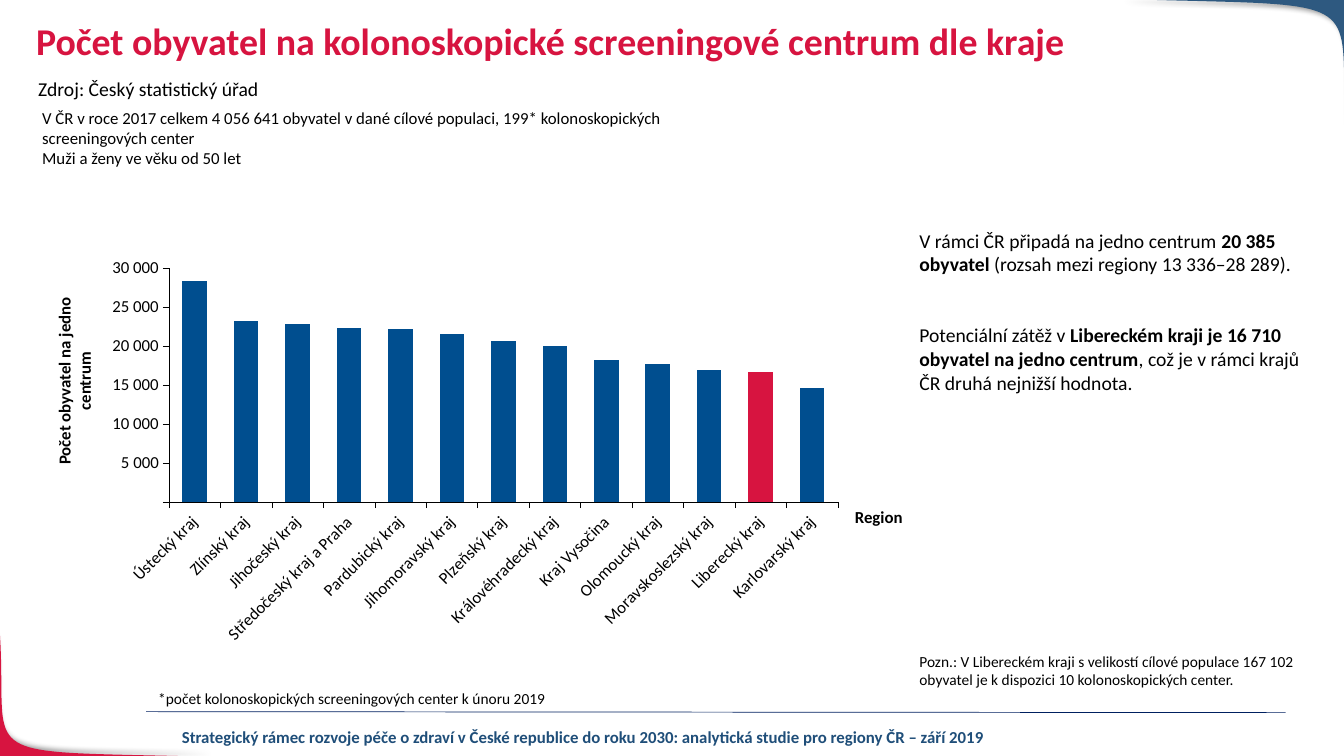
from lxml import etree
from pptx import Presentation
from pptx.chart.data import CategoryChartData
from pptx.dml.color import RGBColor
from pptx.enum.chart import XL_CHART_TYPE, XL_TICK_MARK
from pptx.enum.shapes import MSO_CONNECTOR
from pptx.enum.text import MSO_ANCHOR, PP_ALIGN
from pptx.oxml import parse_xml
from pptx.oxml.ns import nsdecls, qn
from pptx.util import Pt

COLUMNS = XL_CHART_TYPE.COLUMN_CLUSTERED
TICK_OUTSIDE, TICK_NONE = XL_TICK_MARK.OUTSIDE, XL_TICK_MARK.NONE
STRAIGHT = MSO_CONNECTOR.STRAIGHT
TOP = MSO_ANCHOR.TOP
LEFT, CENTER = PP_ALIGN.LEFT, PP_ALIGN.CENTER

EMU_PER_PX = 9144
FONT = "Calibri"
COLORS = {
    "red": "D71440",
    "corner_blue": "2E5980",
    "bar_blue": "004E8F",
    "rule": "002060",
    "footer": "1F4E79",
    "black": "000000",
}
POPULATION_PER_CENTRE = {
    "Ústecký kraj": 28300,
    "Zlínský kraj": 23200,
    "Jihočeský kraj": 22800,
    "Středočeský kraj a Praha": 22300,
    "Pardubický kraj": 22200,
    "Jihomoravský kraj": 21500,
    "Plzeňský kraj": 20600,
    "Královéhradecký kraj": 20000,
    "Kraj Vysočina": 18200,
    "Olomoucký kraj": 17700,
    "Moravskoslezský kraj": 16900,
    "Liberecký kraj": 16700,
    "Karlovarský kraj": 14600,
}
HIGHLIGHTED_REGION = "Liberecký kraj"
PLOT_AREA = {"x": 0.107, "y": 0.109, "w": 0.862, "h": 0.516}


def px(length):
    """Turn px into EMU."""
    return round(length * EMU_PER_PX)


def color(name):
    """Look up a named colour."""
    return RGBColor.from_string(COLORS[name])


def style_font(font, size, bold=False, color_name="black"):
    """Set the typeface, size, weight and colour of a font."""
    font.name = FONT
    font.size = Pt(size)
    font.bold = bold
    font.color.rgb = color(color_name)


def add_text(slide, box, paragraphs, size, bold=False, color_name="black",
             align=LEFT, rotation=0, wrap=True, gap=0, line_spacing=None):
    """Add a text box; each paragraph is a list of (text, bold) runs or one string."""
    shape = slide.shapes.add_textbox(*map(px, box))
    shape.rotation = rotation
    frame = shape.text_frame
    frame.word_wrap = wrap
    frame.vertical_anchor = TOP
    for index, content in enumerate(paragraphs):
        paragraph = frame.add_paragraph() if index else frame.paragraphs[0]
        paragraph.alignment = align
        paragraph.line_spacing = line_spacing
        if index:
            paragraph.space_before = Pt(gap)
        runs = [(content, bold)] if isinstance(content, str) else content
        for text, run_bold in runs:
            run = paragraph.add_run()
            run.text = text
            style_font(run.font, size, run_bold, color_name)


def curve_points(start, first_control, second_control, end, steps=40):
    """Sample a cubic curve, returning points in EMU."""
    points = []
    for step in range(steps + 1):
        t = step / steps
        weights = ((1 - t) ** 3, 3 * t * (1 - t) ** 2, 3 * t ** 2 * (1 - t), t ** 3)
        controls = (start, first_control, second_control, end)
        points.append(tuple(
            px(sum(weight * point[axis] for weight, point in zip(weights, controls)))
            for axis in (0, 1)))
    return points


def add_corner(slide, curve, corner, color_name, shadow_degrees):
    """Add a curved corner with a soft shadow."""
    points = curve_points(*curve) + [tuple(map(px, corner))]
    builder = slide.shapes.build_freeform(*points[0], scale=1.0)
    builder.add_line_segments(points[1:], close=True)
    shape = builder.convert_to_shape()
    shape.fill.solid()
    shape.fill.fore_color.rgb = color(color_name)
    shape.line.fill.background()
    shape.shadow.inherit = False
    effects = shape._element.spPr.find(qn("a:effectLst"))
    effects.append(parse_xml(
        f'<a:outerShdw {nsdecls("a")} blurRad="{Pt(4)}" dist="{Pt(3)}" '
        f'dir="{shadow_degrees * 60000}" algn="tl" rotWithShape="0">'
        f'<a:srgbClr val="{COLORS["black"]}"><a:alpha val="40000"/></a:srgbClr>'
        '</a:outerShdw>'))


def add_rule(slide, start, end):
    """Add the thin line above the footer."""
    rule = slide.shapes.add_connector(STRAIGHT, *map(px, start + end))
    rule.line.color.rgb = color("rule")
    rule.line.width = Pt(0.5)
    etree.SubElement(rule._element.spPr, qn("a:effectLst"))


def style_axis(axis):
    """Give an axis its line, ticks and label font."""
    axis.has_major_gridlines = False
    axis.major_tick_mark = TICK_OUTSIDE
    axis.minor_tick_mark = TICK_NONE
    axis.format.line.color.rgb = color("black")
    axis.format.line.width = Pt(0.25)
    style_font(axis.tick_labels.font, 12)


def set_plot_area(chart):
    """Fix the inner plot area as fractions of the chart."""
    plot_area = chart._chartSpace.chart.plotArea
    for old_layout in plot_area.findall(qn("c:layout")):
        plot_area.remove(old_layout)
    modes = '<c:xMode val="edge"/><c:yMode val="edge"/>'
    sizes = "".join(f'<c:{key} val="{value}"/>' for key, value in PLOT_AREA.items())
    plot_area.insert(0, parse_xml(
        f'<c:layout {nsdecls("c")}><c:manualLayout><c:layoutTarget val="inner"/>'
        f'{modes}{sizes}</c:manualLayout></c:layout>'))


def add_region_chart(slide, box):
    """Add the column chart of population per centre by region."""
    data = CategoryChartData()
    data.categories = list(POPULATION_PER_CENTRE)
    data.add_series("Počet obyvatel na jedno centrum", POPULATION_PER_CENTRE.values())
    chart = slide.shapes.add_chart(COLUMNS, *map(px, box), data).chart
    chart.has_legend = False
    chart.has_title = False
    style_font(chart.font, 12)
    set_plot_area(chart)
    plot = chart.plots[0]
    plot.gap_width = 110
    plot.vary_by_categories = False
    series = plot.series[0]
    highlighted = list(POPULATION_PER_CENTRE).index(HIGHLIGHTED_REGION)
    for target, name in ((series, "bar_blue"), (series.points[highlighted], "red")):
        target.format.fill.solid()
        target.format.fill.fore_color.rgb = color(name)
    style_axis(chart.category_axis)
    label_body = chart.category_axis._element.find(qn("c:txPr")).find(qn("a:bodyPr"))
    label_body.set("rot", "-2700000")
    label_body.set("vert", "horz")
    values = chart.value_axis
    style_axis(values)
    values.minimum_scale = 0
    values.maximum_scale = 30000
    values.major_unit = 5000
    values.tick_labels.number_format = r"###\ ###"
    values.tick_labels.number_format_is_linked = False


def main():
    """Build and save the slide."""
    presentation = Presentation()
    presentation.slide_width = px(1333)
    presentation.slide_height = px(750)
    slide = presentation.slides.add_slide(presentation.slide_layouts[6])

    add_corner(slide, ((213, 751), (-34, 744), (8, 759), (0, 630)), (-1, 751), "red", 225)
    add_corner(slide, ((1111, -1), (1370, 7), (1326, -10), (1335, 142)), (1335, -1),
               "corner_blue", 45)
    add_rule(slide, (145, 706), (1275, 707))
    add_text(slide, (157, 716, 843, 30),
             ["Strategický rámec rozvoje péče o zdraví v České republice do roku 2030: "
              "analytická studie pro regiony ČR – září 2019"],
             12, True, "footer", CENTER)

    add_text(slide, (26, 18, 1150, 69),
             ["Počet obyvatel na kolonoskopické screeningové centrum dle kraje"],
             27, True, "red", line_spacing=0.9)
    add_text(slide, (28, 71, 847, 34), ["Zdroj: Český statistický úřad"], 14)
    add_text(slide, (32, 102, 734, 71),
             ["V ČR v roce 2017 celkem 4 056 641 obyvatel v dané cílové populaci, "
              "199* kolonoskopických screeningových center",
              "Muži a ženy ve věku od 50 let"], 12)

    add_region_chart(slide, (85, 217, 770, 450))
    add_text(slide, (-41, 360, 215, 36), ["Počet obyvatel na jedno centrum"],
             12, True, align=CENTER, rotation=270)
    add_text(slide, (838, 498, 108, 28), ["Region"], 12, True)
    add_text(slide, (147, 679, 408, 29),
             ["*počet kolonoskopických screeningových center k únoru 2019"], 11, wrap=False)

    add_text(slide, (902, 222, 418, 180), [
        [("V rámci ČR připadá na jedno centrum ", False), ("20 385 obyvatel", True),
         (" (rozsah mezi regiony 13 336–28 289).", False)],
        [("Potenciální zátěž v\u00a0", False),
         ("Libereckém kraji je 16 710 obyvatel na\u00a0jedno centrum", True),
         (", což je v rámci krajů ČR druhá nejnižší hodnota.", False)],
    ], 14, gap=34)
    add_text(slide, (902, 642, 418, 51),
             ["Pozn.: V Libereckém kraji s velikostí cílové populace 167 102 obyvatel "
              "je k dispozici 10 kolonoskopických center."], 11)
    presentation.save("out.pptx")


if __name__ == "__main__":
    main()
